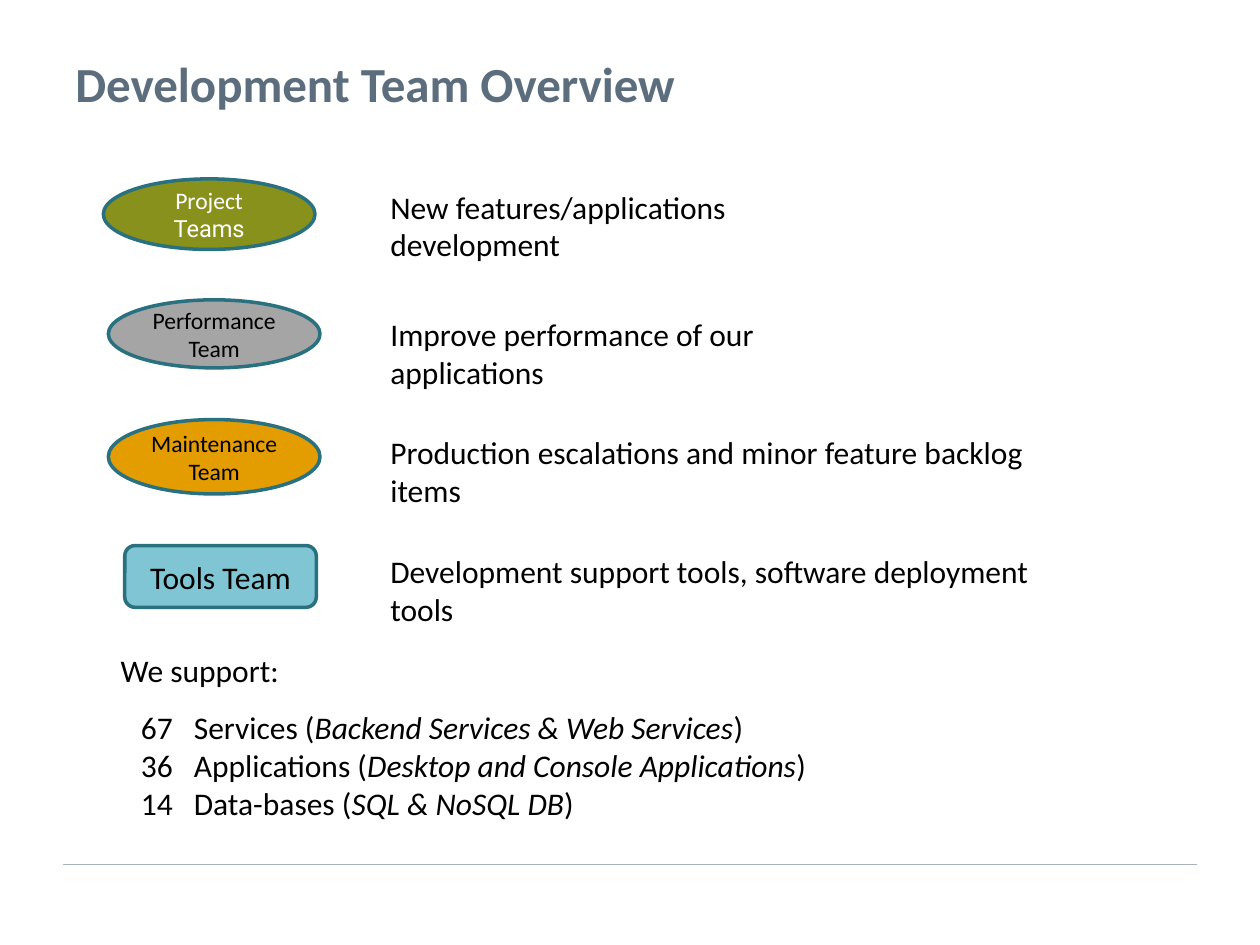
from dataclasses import dataclass
from typing import NamedTuple

from lxml import etree
from pptx import Presentation, util as u
from pptx.dml.color import RGBColor
from pptx.enum import shapes, text
from pptx.oxml import ns

COLUMNS, ROWS = 100, 75
CELL = u.Inches(0.1)


@dataclass(frozen=True)
class Theme:
    font: str = "Calibri"
    accent_font: str = "Roboto"
    title: str = "5C6E7D"
    rule: str = "A7B2BD"
    outline: str = "2A7180"
    black: str = "000000"
    white: str = "FFFFFF"
    title_size: float = 28
    body_size: float = 18
    badge_size: float = 13.5


THEME = Theme()


class Frame(NamedTuple):
    """Left, top, width and height in grid cells."""
    left: float
    top: float
    width: float
    height: float

    def lengths(self) -> list[int]:
        return [cells(value) for value in self]


@dataclass(frozen=True)
class Team:
    name: tuple[str, ...]
    badge: Frame
    fill: str
    duty: str
    duty_top: float
    duty_width: float
    color: str = THEME.black
    size: float = THEME.badge_size
    shape: shapes.MSO_SHAPE = shapes.MSO_SHAPE.OVAL
    insets: tuple[float, float] = (0.7, 0.4)


class Support(NamedTuple):
    count: int
    kind: str
    detail: str


TEAMS = (
    Team(("Project", " Teams"), Frame(8.2, 14.2, 16.8, 5.6), "89911D",
         "New features/applications development", 14.4, 41.5, color=THEME.white),
    Team(("Performance Team",), Frame(8.6, 23.8, 16.8, 5.4), "A5A5A5",
         "Improve performance of our applications", 24.5, 42.5),
    Team(("Maintenance Team",), Frame(8.6, 33.3, 16.8, 5.9), "E49D01",
         "Production escalations and minor feature backlog items", 33.9, 57),
    Team(("Tools Team",), Frame(9.9, 43.3, 15.2, 4.9), "7FC5D4",
         "Development support tools, software deployment tools", 43.3, 57,
         size=THEME.body_size, shape=shapes.MSO_SHAPE.ROUNDED_RECTANGLE,
         insets=(1, 0.5)),
)

SUPPORTED = (
    Support(67, "Services", "Backend Services & Web Services"),
    Support(36, "Applications", "Desktop and Console Applications"),
    Support(14, "Data-bases", "SQL & NoSQL DB"),
)


def cells(count: float) -> int:
    return round(count * CELL)


def rgb(color: str) -> RGBColor:
    return RGBColor.from_string(color)


def format_span(span, size: float, color: str, bold: bool = False, italic: bool = False) -> None:
    span.font.name = THEME.font
    span.font.size = u.Pt(size)
    span.font.color.rgb = rgb(color)
    span.font.bold = bold
    span.font.italic = italic


def add_text(page, frame: Frame, content: str, size: float = THEME.body_size,
             color: str = THEME.black, bold: bool = False,
             anchor=text.MSO_ANCHOR.TOP) -> None:
    box = page.shapes.add_textbox(*frame.lengths())
    box.text_frame.word_wrap = True
    box.text_frame.vertical_anchor = anchor
    box.text_frame.text = content
    format_span(box.text_frame.paragraphs[0].runs[0], size, color, bold)


def add_team(page, team: Team) -> None:
    badge = page.shapes.add_shape(team.shape, *team.badge.lengths())
    badge.shadow.inherit = False
    badge.fill.solid()
    badge.fill.fore_color.rgb = rgb(team.fill)
    badge.line.color.rgb = rgb(THEME.outline)
    badge.line.width = u.Pt(2)
    body = badge.text_frame
    body.word_wrap = True
    body.vertical_anchor = text.MSO_ANCHOR.MIDDLE
    side, edge = map(cells, team.insets)
    body.margin_left = body.margin_right = side
    body.margin_top = body.margin_bottom = edge
    para = body.paragraphs[0]
    para.alignment = text.PP_ALIGN.CENTER
    for index, part in enumerate(team.name):
        span = para.add_run()
        span.text = part
        format_span(span, team.size, team.color)
        if index:
            span.font.name = THEME.accent_font
    add_text(page, Frame(30, team.duty_top, team.duty_width, 4), team.duty)


def add_supported(page, frame: Frame, entries: tuple[Support, ...]) -> None:
    """Lists the counts, with the kinds aligned by a hanging indent."""
    box = page.shapes.add_textbox(*frame.lengths())
    body = box.text_frame
    body.word_wrap = True
    hang = cells(4.2)
    for index, entry in enumerate(entries):
        para = body.add_paragraph() if index else body.paragraphs[0]
        properties = para._p.get_or_add_pPr()
        properties.set("marL", str(hang))
        properties.set("indent", str(-hang))
        parts = ((f"{entry.count}\t{entry.kind} (", False), (entry.detail, True), (")", False))
        for content, italic in parts:
            span = para.add_run()
            span.text = content
            format_span(span, THEME.body_size, THEME.black, italic=italic)


def add_rule(page, left: float, right: float, top: float) -> None:
    rule = page.shapes.add_connector(shapes.MSO_CONNECTOR.STRAIGHT,
                                     *map(cells, (left, top, right, top)))
    rule.line.color.rgb = rgb(THEME.rule)
    rule.line.width = u.Pt(0.75)
    etree.SubElement(rule._element.spPr, ns.qn("a:effectLst"))


def main() -> None:
    deck = Presentation()
    deck.slide_width, deck.slide_height = cells(COLUMNS), cells(ROWS)
    page = deck.slides.add_slide(deck.slide_layouts[6])
    add_rule(page, 5, 95, 68.6)
    add_text(page, Frame(5, 3, 90, 7.2), "Development Team Overview", THEME.title_size,
             THEME.title, bold=True, anchor=text.MSO_ANCHOR.MIDDLE)
    add_supported(page, Frame(10.2, 55.7, 67.1, 10.1), SUPPORTED)
    for team in TEAMS:
        add_team(page, team)
    add_text(page, Frame(8.6, 51.2, 14.7, 4), "We support:")
    deck.save("out.pptx")


if __name__ == "__main__":
    main()
